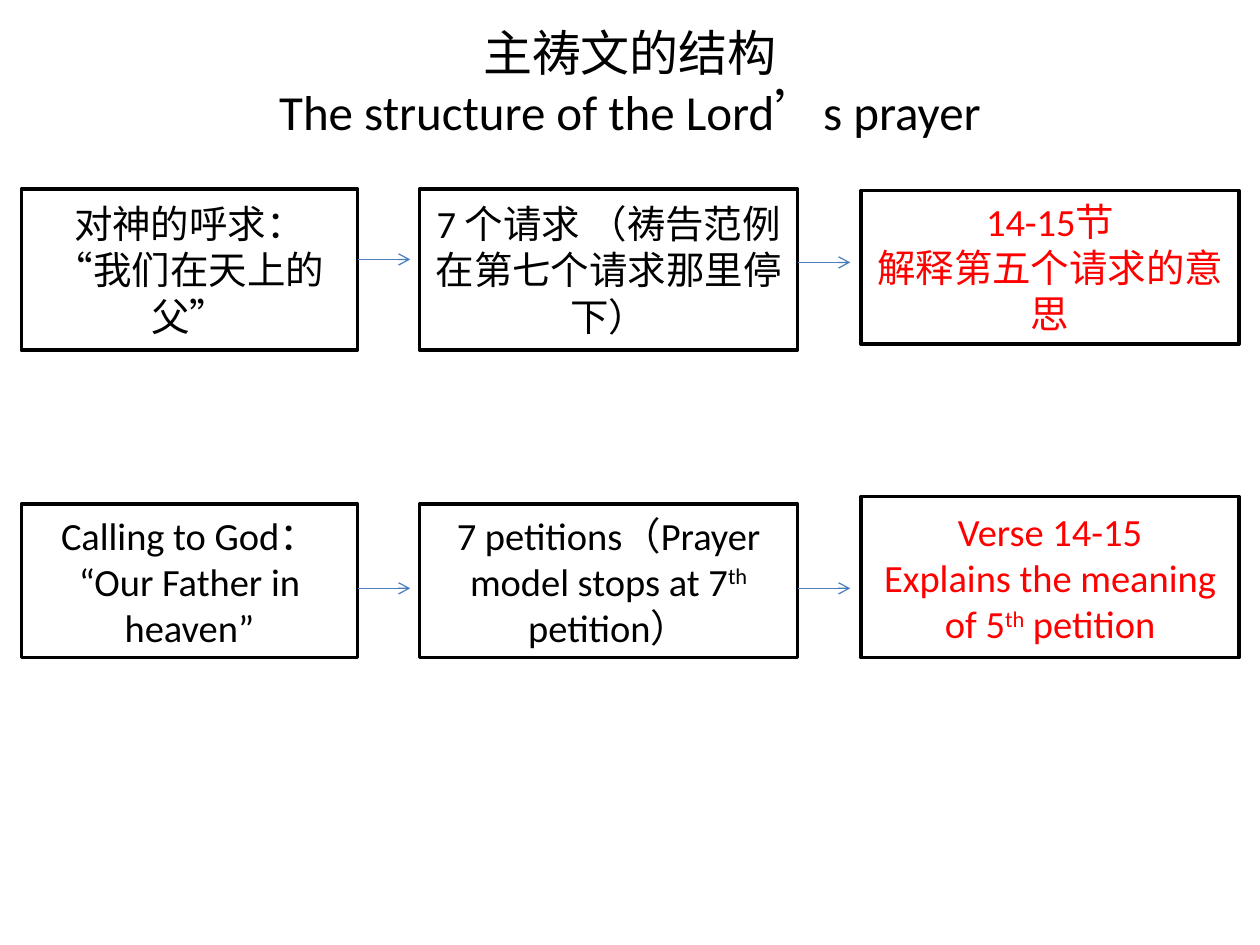
from lxml.etree import SubElement
from pptx import Presentation
from pptx.dml.color import RGBColor
from pptx.enum.shapes import MSO_CONNECTOR, MSO_SHAPE
from pptx.enum.text import MSO_ANCHOR, PP_ALIGN
from pptx.oxml.ns import qn
from pptx.util import Cm, Pt

TITLE = "主祷文的结构\vThe structure of the Lord’s prayer"
BLACK, RED, WHITE, BLUE = "000000", "FF0000", "FFFFFF", "4B7EBC"
SUPERSCRIPT = "th"

COLUMNS = [(0.43, 6.78, BLACK), (8.46, 7.62, BLACK), (17.36, 7.62, RED)]
ROWS = [
    {
        "boxes": [
            (3.81, 3.25, [["对神的呼求："], ["“我们在天上的父”"]]),
            (3.81, 3.25, [["7 个请求 （祷告范例在第七个请求那里停下）"]]),
            (3.84, 3.1, [["14-15节"], ["解释第五个请求的意思"]]),
        ],
        "arrows": [5.23, 5.29],
    },
    {
        "boxes": [
            (10.16, 3.1, [["Calling to God："], ["“Our Father in heaven”"]]),
            (10.16, 3.1, [["7 petitions（Prayer model stops at 7", SUPERSCRIPT, " petition）"]]),
            (10.01, 3.25, [["Verse 14-15"],
                           ["Explains the meaning of 5", SUPERSCRIPT, " petition"]]),
        ],
        "arrows": [11.86, 11.86],
    },
]
ARROW_LENGTH = 1.06


def color(value):
    return RGBColor.from_string(value)


def write(frame, paragraphs, size, text_color):
    frame.word_wrap = True
    frame.vertical_anchor = MSO_ANCHOR.MIDDLE
    for index, parts in enumerate(paragraphs):
        paragraph = frame.add_paragraph() if index else frame.paragraphs[0]
        paragraph.alignment = PP_ALIGN.CENTER
        paragraph.font.name = "Calibri"
        paragraph.font.size = Pt(size)
        paragraph.font.color.rgb = color(text_color)
        for part in parts:
            run = paragraph.add_run()
            run.text = part
            if part == SUPERSCRIPT:
                run._r.get_or_add_rPr().set("baseline", "30000")


def add_title(slide):
    title = slide.shapes.add_textbox(Cm(1.27), Cm(0.76), Cm(22.86), Cm(1.78))
    write(title.text_frame, [[]], 28, BLACK)
    paragraph = title.text_frame.paragraphs[0]
    for index, line in enumerate(TITLE.split("\v")):
        if index:
            paragraph.add_line_break()
        paragraph.add_run().text = line


def add_box(slide, left, top, width, height, paragraphs, text_color):
    box = slide.shapes.add_shape(MSO_SHAPE.RECTANGLE, Cm(left), Cm(top), Cm(width), Cm(height))
    box.shadow.inherit = False
    box.fill.solid()
    box.fill.fore_color.rgb = color(WHITE)
    box.line.color.rgb = color(BLACK)
    box.line.width = Pt(2)
    write(box.text_frame, paragraphs, 22, text_color)


def add_arrow(slide, start, y):
    arrow = slide.shapes.add_connector(
        MSO_CONNECTOR.STRAIGHT, Cm(start), Cm(y), Cm(start + ARROW_LENGTH), Cm(y))
    arrow.line.color.rgb = color(BLUE)
    arrow.line.width = Pt(0.75)
    SubElement(arrow.line._get_or_add_ln(), qn("a:tailEnd"), type="arrow")
    SubElement(arrow._element.spPr, qn("a:effectLst"))


def main():
    deck = Presentation()
    deck.slide_width, deck.slide_height = Cm(25.4), Cm(19.05)
    slide = deck.slides.add_slide(deck.slide_layouts[6])
    add_title(slide)
    for row in ROWS:
        for (left, width, text_color), (top, height, paragraphs) in zip(COLUMNS, row["boxes"]):
            add_box(slide, left, top, width, height, paragraphs, text_color)
        for (left, width, _), y in zip(COLUMNS, row["arrows"]):
            add_arrow(slide, left + width, y)
    deck.save("out.pptx")


if __name__ == "__main__":
    main()
